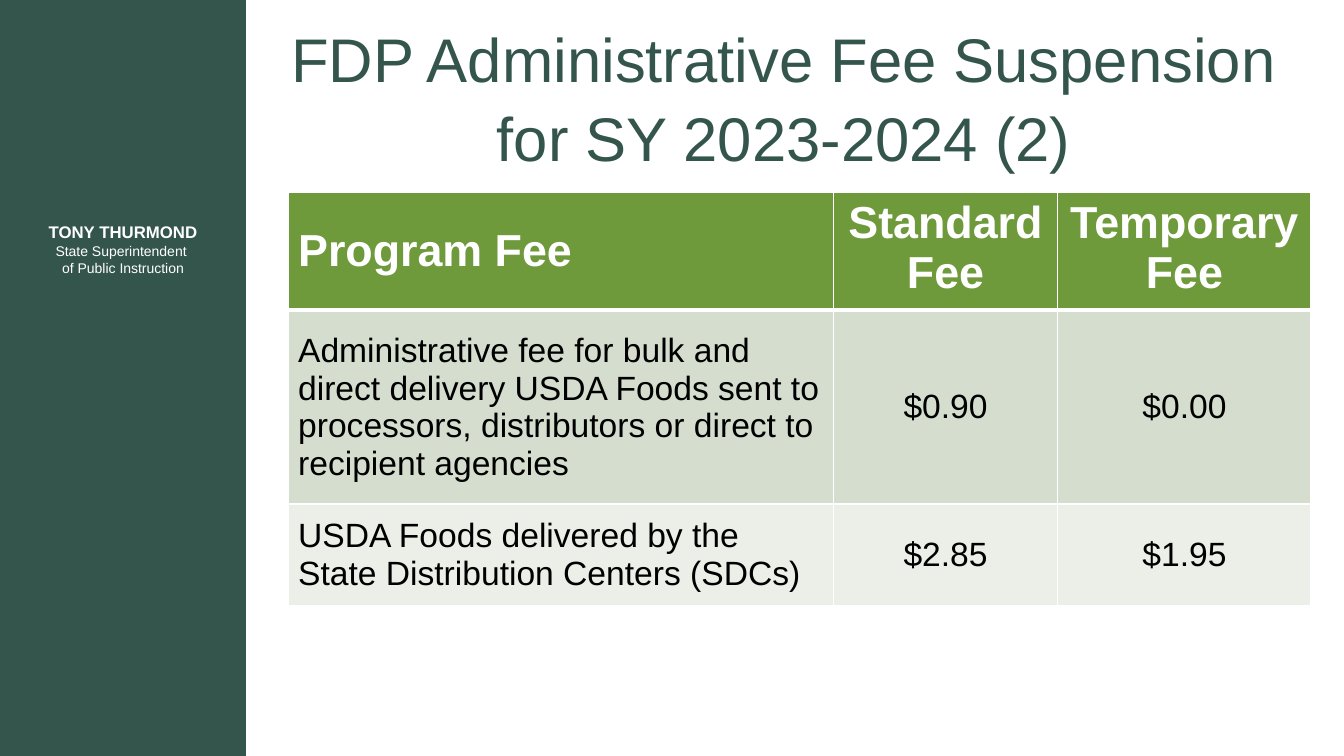
import pptx
import pptx.util
import pptx.dml.color
import pptx.enum.shapes
import pptx.enum.text
import pptx.oxml
import pptx.oxml.ns

Cm = pptx.util.Cm
Pt = pptx.util.Pt
RGB = pptx.dml.color.RGBColor
ALIGN = pptx.enum.text.PP_ALIGN
ANCHOR = pptx.enum.text.MSO_ANCHOR

PINE = RGB(0x34, 0x55, 0x4C)
LEAF = RGB(0x6E, 0x9A, 0x3B)
SAGE = RGB(0xD5, 0xDE, 0xCE)
MIST = RGB(0xEB, 0xEF, 0xE8)
WHITE = RGB(0xFF, 0xFF, 0xFF)
BLACK = RGB(0, 0, 0)


class Page:
    face = "Arial"

    def __init__(self, slide):
        self.slide = slide

    def style(self, font, size, color, bold=False):
        font.name = self.face
        font.size = Pt(size)
        font.bold = bold
        font.color.rgb = color

    def panel(self, left, top, width, height, color):
        shape = self.slide.shapes.add_shape(
            pptx.enum.shapes.MSO_SHAPE.RECTANGLE,
            Cm(left), Cm(top), Cm(width), Cm(height))
        shape.shadow.inherit = False
        shape.fill.solid()
        shape.fill.fore_color.rgb = color
        shape.line.fill.background()

    def text(self, left, top, width, height):
        box = self.slide.shapes.add_textbox(
            Cm(left), Cm(top), Cm(width), Cm(height))
        frame = box.text_frame
        frame.word_wrap = True
        frame.vertical_anchor = ANCHOR.MIDDLE
        frame.margin_left = frame.margin_right = Cm(0.13)
        para = frame.paragraphs[0]
        para.alignment = ALIGN.CENTER
        return para

    def title(self, left, top, width, height, words):
        para = self.text(left, top, width, height)
        para.text = words
        para.line_spacing = 1.07
        self.style(para.font, 44, PINE)

    def credit(self, left, top, width, height, lines):
        para = self.text(left, top, width, height)
        for i, (words, size, bold) in enumerate(lines):
            if i:
                para.add_line_break()
            run = para.add_run()
            run.text = words
            self.style(run.font, size, WHITE, bold)

    def border(self, cell, low):
        props = cell._tc.get_or_add_tcPr()
        for side, width in (("L", 1), ("R", 1), ("T", 1), ("B", low)):
            props.append(pptx.oxml.parse_xml(
                f'<a:ln{side} {pptx.oxml.ns.nsdecls("a")} w="{Pt(width)}">'
                f'<a:solidFill><a:srgbClr val="{WHITE}"/></a:solidFill>'
                f'</a:ln{side}>'))

    def table(self, left, top, widths, heights, rows):
        grid = self.slide.shapes.add_table(
            len(rows), len(widths), Cm(left), Cm(top),
            Cm(sum(widths)), Cm(sum(heights))).table
        for col, width in zip(grid.columns, widths):
            col.width = Cm(width)
        for row, height in zip(grid.rows, heights):
            row.height = Cm(height)
        fills = (LEAF, SAGE, MIST)
        for r, row in enumerate(rows):
            head = r == 0
            for c, words in enumerate(row):
                cell = grid.cell(r, c)
                self.border(cell, 3 if head else 1)
                cell.fill.solid()
                cell.fill.fore_color.rgb = fills[r]
                cell.vertical_anchor = ANCHOR.TOP if head and c else ANCHOR.MIDDLE
                cell.text = words
                para = cell.text_frame.paragraphs[0]
                para.alignment = ALIGN.CENTER if c else ALIGN.LEFT
                self.style(para.font, 32 if head else 24,
                           WHITE if head else BLACK, head)


def main():
    deck = pptx.Presentation()
    deck.slide_width = Cm(33.87)
    deck.slide_height = Cm(19.05)
    page = Page(deck.slides.add_slide(deck.slide_layouts[6]))
    page.panel(0, 0, 6.2, 19.05, PINE)
    page.credit(0.74, 5.31, 4.72, 1.93, [
        ("TONY THURMOND", 12, True),
        ("State Superintendent ", 10, False),
        ("of Public Instruction", 10, False),
    ])
    page.title(7.06, 0.81, 25.4, 3.18,
               "FDP Administrative Fee Suspension for SY 2023-2024 (2)")
    page.table(7.26, 4.85, [13.74, 5.66, 6.38], [2.97, 4.88, 2.57], [
        ("Program Fee", "Standard Fee", "Temporary Fee"),
        ("Administrative fee for bulk and direct delivery USDA Foods sent to "
         "processors, distributors or direct to recipient agencies",
         "$0.90", "$0.00"),
        ("USDA Foods delivered by the State Distribution Centers (SDCs)",
         "$2.85", "$1.95"),
    ])
    deck.save("out.pptx")


if __name__ == "__main__":
    main()
